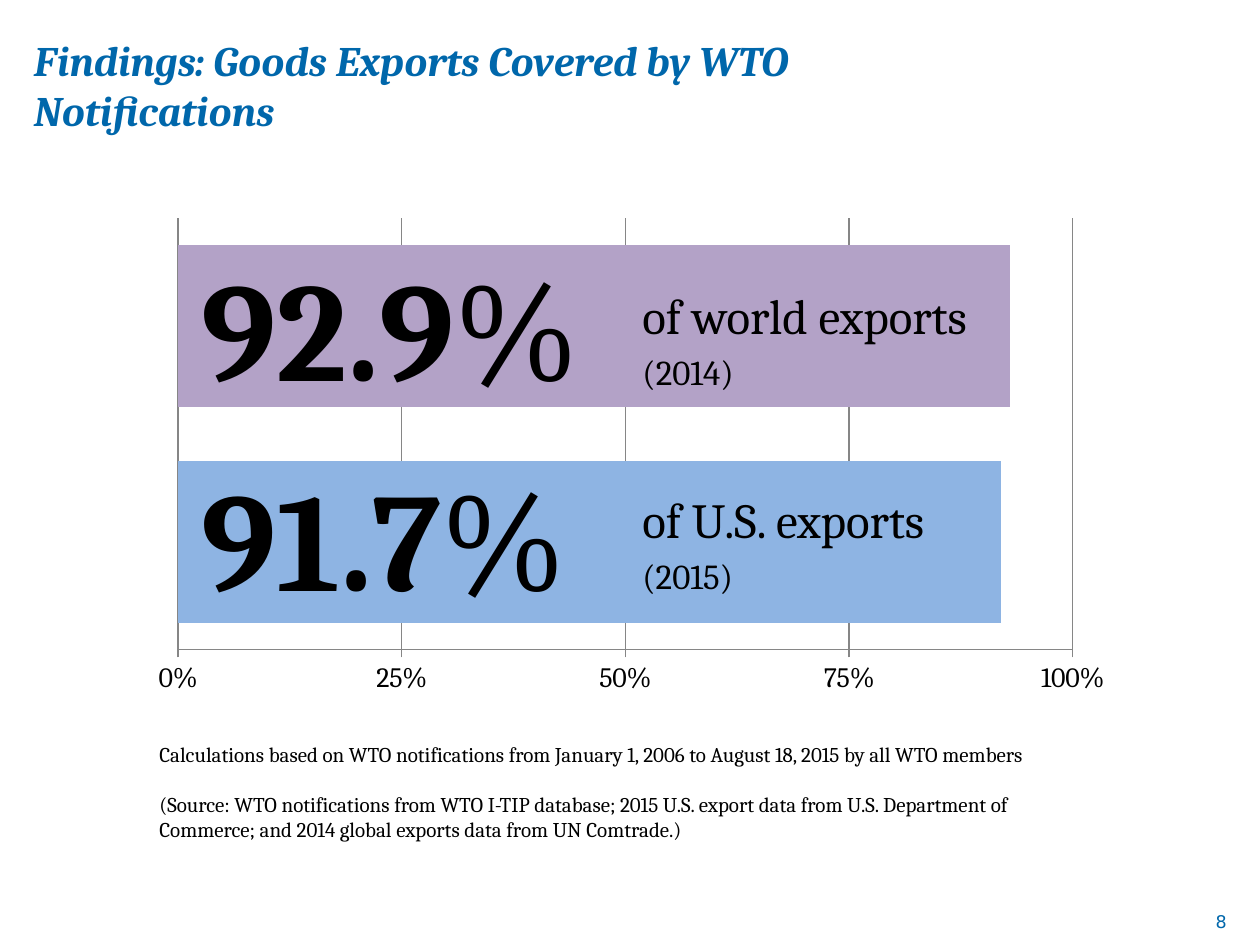
from lxml import etree
from pptx import Presentation, util as u
from pptx.chart.data import CategoryChartData
from pptx.dml.color import RGBColor
from pptx.enum import chart as ch, text
from pptx.oxml import ns

deck = Presentation()
deck.slide_width, deck.slide_height = u.Inches(10), u.Inches(7.5)
slide = deck.slides.add_slide(deck.slide_layouts[6])
cell = deck.slide_width / 120  # grid of 120 columns by 90 rows
BLUE, BLACK, GREY = "0067AB", "000000", "868686"


def paint(part, hue):
    if hasattr(part, "solid"):
        part.solid()
        part = part.fore_color
    part.rgb = RGBColor.from_string(hue)


def write(grid, lines, size, hue=BLACK, face="Cambria"):
    box = slide.shapes.add_textbox(*[round(n * cell) for n in grid])
    frame = box.text_frame
    frame.text = "\n".join(lines)
    frame.word_wrap = True
    for para in frame.paragraphs:
        for run in para.runs:
            run.font.size, run.font.name = u.Pt(size), face
            paint(run.font.color, hue)
    return frame


# Title and page number
title = write((2.04, 2.06, 95, 12), ["Findings: Goods Exports Covered by WTO Notifications"], 24, BLUE)
title.vertical_anchor = text.MSO_ANCHOR.MIDDLE
font = title.paragraphs[0].runs[0].font
font.bold = font.italic = True
page = write((104, 86.16, 14, 6), ["8"], 10, BLUE, "DejaVu Sans")
page.paragraphs[0].alignment = text.PP_ALIGN.RIGHT

# Notes under the chart
notes = write((14, 70, 89, 11), [
    "Calculations based on WTO notifications from January 1, 2006 to August 18, 2015 by all WTO members",
    "(Source: WTO notifications from WTO I-TIP database; 2015 U.S. export data from "
    "U.S. Department of Commerce; and 2014 global exports data from UN Comtrade.)"], 12)
notes.paragraphs[1].space_before = u.Pt(14.4)

# Bar chart
data = CategoryChartData(number_format="0%")
data.categories = ["U.S.", "World"]
data.add_series("Series 1", (0.92, 0.93))
area = [round(n * cell) for n in (14.2, 18.96, 95, 51)]
chart = slide.shapes.add_chart(ch.XL_CHART_TYPE.BAR_CLUSTERED, *area, data).chart
chart.has_legend = chart.has_title = False
chart.font.size, chart.font.name = u.Pt(10), "Cambria"
paint(chart.font.color, BLACK)
plot = chart.plots[0]
plot.gap_width, plot.overlap, plot.vary_by_categories = 33, -23, False
bars = plot.series[0]
paint(bars.format.fill, "B3A2C7")
paint(bars.points[0].format.fill, "8EB4E3")

# Axes
chart.category_axis.visible = False
axis = chart.value_axis
axis.minimum_scale, axis.maximum_scale, axis.major_unit = 0, 1, 0.25
axis.major_tick_mark = ch.XL_TICK_MARK.OUTSIDE
axis.has_major_gridlines = True
for line in (axis.format.line, axis.major_gridlines.format.line):
    line.width = u.Pt(0.75)
    paint(line.fill, GREY)
labels = axis.tick_labels
labels.number_format, labels.number_format_is_linked = "0%", False
labels.font.size, labels.font.name = u.Pt(16), "Cambria"
paint(labels.font.color, BLACK)

# Place of the plot, as shares of the chart
room = chart._chartSpace.chart.plotArea
for old in room.findall(ns.qn("c:layout")):
    room.remove(old)
layout = etree.Element(ns.qn("c:layout"))
room.insert(0, layout)
manual = etree.SubElement(layout, ns.qn("c:manualLayout"))
for tag, val in (("layoutTarget", "inner"), ("xMode", "edge"), ("yMode", "edge"),
                 ("x", "0.029"), ("y", "0.036"), ("w", "0.897"), ("h", "0.806")):
    etree.SubElement(manual, ns.qn("c:" + tag)).set("val", val)

# Large figures, with a light percent sign
rates = write((18, 20, 69, 40), ["92.9", "91.7"], 80)
for para in rates.paragraphs:
    para.runs[0].font.bold = True
    sign = para.add_run()
    sign.text = "%"
    sign.font.size, sign.font.name, sign.font.bold = u.Pt(80), "Cambria", False
    paint(sign.font.color, BLACK)

# Captions on the bars
caps = [write((60, 45.17, 35, 17), ["of U.S. exports\v(2015)"], 28),
        write((60, 25.8, 39, 13.5), ["of world exports\v(2014)"], 28)]
for cap in caps:
    cap.paragraphs[0].runs[1].font.size = u.Pt(20)
for frame in [rates] + caps:
    for para in frame.paragraphs:
        para.line_spacing, para.space_after = 1.15, u.Pt(10)

deck.save("out.pptx")
